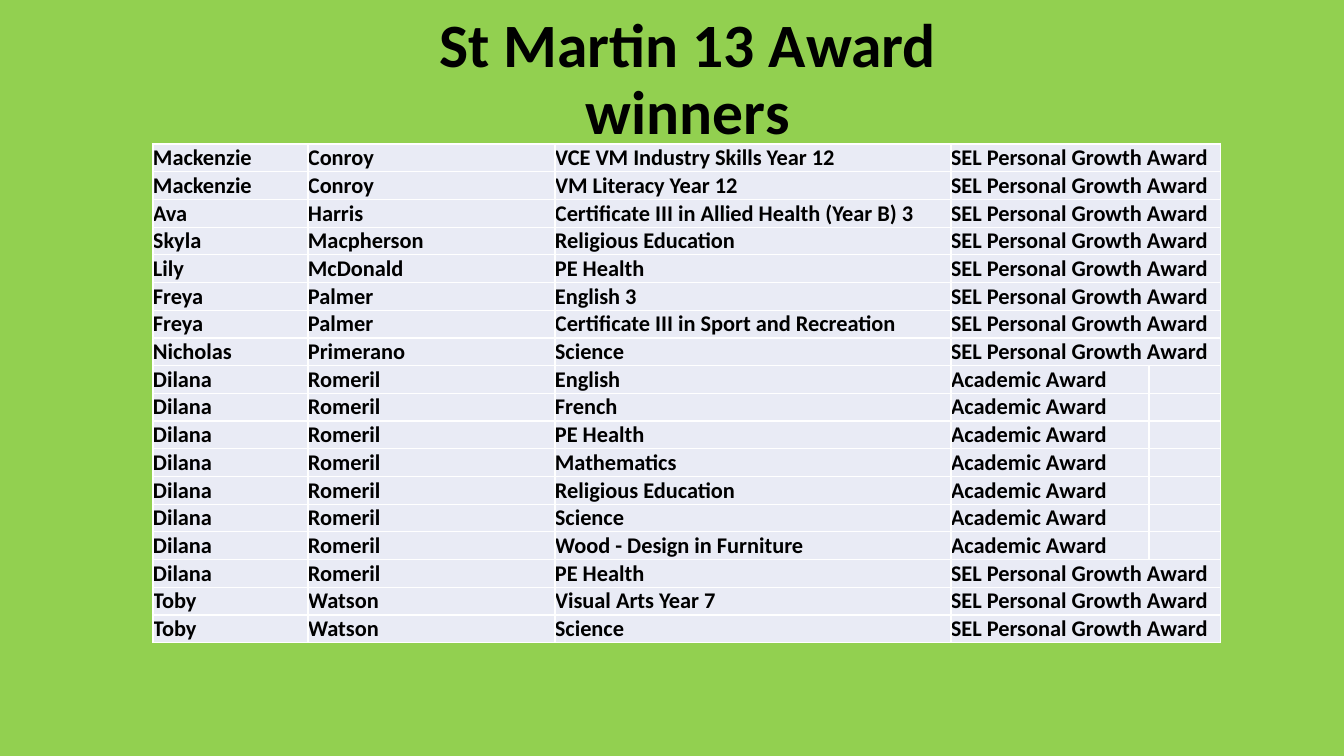
from lxml import etree
from pptx import Presentation
from pptx.dml.color import RGBColor
from pptx.enum.text import MSO_ANCHOR as Anchor, PP_ALIGN as Align
from pptx.oxml.ns import qn
from pptx.util import Pt

PX = 914400 / 100.8
FONT = "Calibri"
GREEN, PALE, WHITE, BLACK = "92D050", "E9EBF5", "FFFFFF", "000000"
GROWTH, ACADEMIC = "SEL Personal Growth Award", "Academic Award"
COLS = [155, 247, 396, 198, 72]

WINNERS = [
    ("Mackenzie", "Conroy", "VCE VM Industry Skills Year 12", GROWTH),
    ("Mackenzie", "Conroy", "VM Literacy Year 12", GROWTH),
    ("Ava", "Harris", "Certificate III in Allied Health (Year B) 3", GROWTH),
    ("Skyla", "Macpherson", "Religious Education", GROWTH),
    ("Lily", "McDonald", "PE Health", GROWTH),
    ("Freya", "Palmer", "English 3", GROWTH),
    ("Freya", "Palmer", "Certificate III in Sport and Recreation", GROWTH),
    ("Nicholas", "Primerano", "Science", GROWTH),
    ("Dilana", "Romeril", "English", ACADEMIC),
    ("Dilana", "Romeril", "French", ACADEMIC),
    ("Dilana", "Romeril", "PE Health", ACADEMIC),
    ("Dilana", "Romeril", "Mathematics", ACADEMIC),
    ("Dilana", "Romeril", "Religious Education", ACADEMIC),
    ("Dilana", "Romeril", "Science", ACADEMIC),
    ("Dilana", "Romeril", "Wood - Design in Furniture", ACADEMIC),
    ("Dilana", "Romeril", "PE Health", GROWTH),
    ("Toby", "Watson", "Visual Arts Year 7", GROWTH),
    ("Toby", "Watson", "Science", GROWTH),
]


def px(n):
    return round(n * PX)


def paint(fill, color):
    fill.solid()
    fill.fore_color.rgb = RGBColor.from_string(color)


def style(para, size):
    font = para.font
    font.name, font.size, font.bold = FONT, Pt(size), True
    font.color.rgb = RGBColor.from_string(BLACK)


def add_title(slide, x, y, w, h):
    frame = slide.shapes.add_textbox(px(x), px(y), px(w), px(h)).text_frame
    frame.word_wrap = True
    frame.vertical_anchor = Anchor.MIDDLE
    para = frame.paragraphs[0]
    para.text = "St Martin 13 Award winners"
    para.alignment = Align.CENTER
    para.line_spacing = 0.9
    style(para, 44)


def add_edges(cell):
    # Borders come before the fill in the cell properties
    props = cell._tc.get_or_add_tcPr()
    for i, side in enumerate(("lnL", "lnR", "lnT", "lnB")):
        line = etree.Element(qn("a:" + side), w=str(Pt(1)))
        solid = etree.SubElement(line, qn("a:solidFill"))
        etree.SubElement(solid, qn("a:srgbClr"), val=WHITE)
        props.insert(i, line)


def fill_cell(cell, text):
    cell.margin_left = cell.margin_right = 0
    cell.margin_top = cell.margin_bottom = 0
    cell.vertical_anchor = Anchor.BOTTOM
    para = cell.text_frame.paragraphs[0]
    if text:
        para.text = text
    style(para, 16)
    paint(cell.fill, PALE)
    add_edges(cell)


def add_awards(slide, x, y, w, h):
    rows = len(WINNERS)
    frame = slide.shapes.add_table(rows, len(COLS), px(x), px(y), px(w), px(h))
    table = frame.table
    table.first_row = table.horz_banding = False
    for col, width in zip(table.columns, COLS):
        col.width = px(width)
    for r, winner in enumerate(WINNERS):
        table.rows[r].height = px(h / rows)
        for c, text in enumerate(winner + ("",)):
            fill_cell(table.cell(r, c), text)
        # The longer award name runs over the last two columns
        if winner[3] == GROWTH:
            table.cell(r, 3).merge(table.cell(r, 4))


def main():
    deck = Presentation()
    deck.slide_width, deck.slide_height = px(1344), px(756)
    slide = deck.slides.add_slide(deck.slide_layouts[6])
    paint(slide.background.fill, GREEN)
    add_title(slide, 325, 31, 726, 100)
    add_awards(slide, 153, 144, sum(COLS), 499)
    deck.save("out.pptx")


if __name__ == "__main__":
    main()
